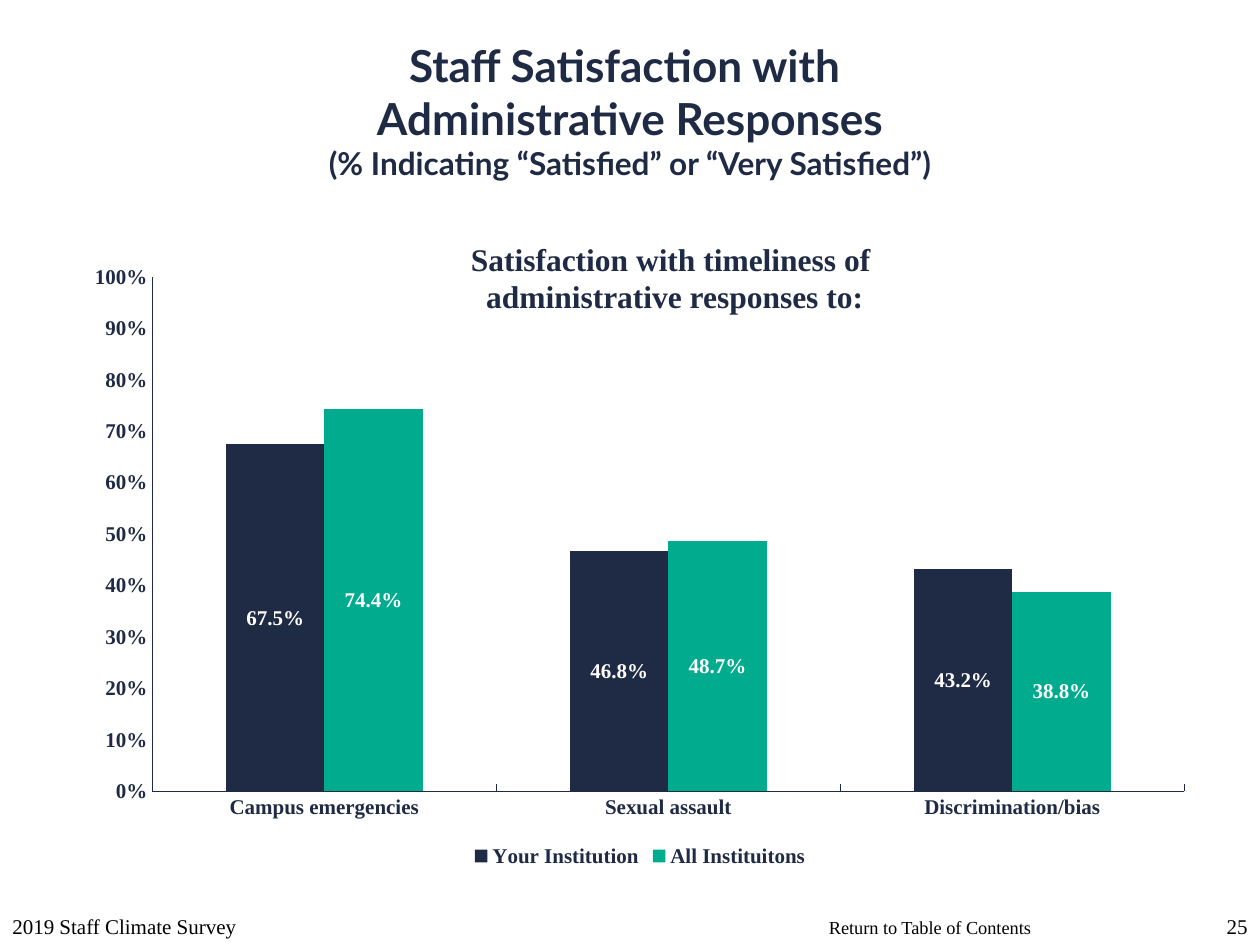
from copy import deepcopy
from lxml.etree import SubElement
from pptx import Presentation
from pptx.chart.data import CategoryChartData
from pptx.dml.color import RGBColor
from pptx.enum.chart import XL_CHART_TYPE, XL_LABEL_POSITION, XL_LEGEND_POSITION, XL_TICK_MARK
from pptx.enum.text import MSO_ANCHOR, MSO_AUTO_SIZE, PP_ALIGN
from pptx.oxml.ns import qn
from pptx.util import Inches, Pt

WIDE, HIGH = Inches(10), Inches(7.5)
HEX = {"navy": "1F2A44", "green": "00AB8E", "white": "FFFFFF", "black": "000000"}
SERIF = "Times New Roman"
CATS = ["Campus emergencies", "Sexual assault", "Discrimination/bias"]
SERIES = [
    ("Your Institution", [0.675, 0.468, 0.432], "navy"),
    ("All Instituitons", [0.744, 0.487, 0.388], "green"),
]


def rgb(name):
    return RGBColor.from_string(HEX[name])


def place(x, y, w, h):
    """Turn shares of the slide's size into lengths."""
    return int(x * WIDE), int(y * HIGH), int(w * WIDE), int(h * HIGH)


def style(font, size, color="navy", bold=True, face=SERIF):
    font.name, font.size, font.bold = face, Pt(size), bold
    font.color.rgb = rgb(color)


def add_title(slide):
    title = slide.shapes.title
    title.left, title.top, title.width, title.height = place(0, 1 / 30, 1, 1 / 6)
    frame = title.text_frame
    frame.text = ("Staff Satisfaction with \vAdministrative Responses\v"
                  "(% Indicating “Satisfied” or “Very Satisfied”)")
    frame.auto_size = MSO_AUTO_SIZE.NONE
    frame.vertical_anchor = MSO_ANCHOR.MIDDLE
    para = frame.paragraphs[0]
    para.alignment = PP_ALIGN.CENTER
    for run, size in zip(para.runs, (25.2, 25.2, 18)):
        style(run.font, size, face="Lato")
    # Line breaks take the size of the text before them
    for gap, run in zip(para._p.findall(qn("a:br")), para.runs):
        gap.insert(0, deepcopy(run._r.rPr))


def add_text(slide, text, box, size, color="black", bold=False,
             align=PP_ALIGN.LEFT, anchor=MSO_ANCHOR.TOP, wrap=True):
    frame = slide.shapes.add_textbox(*place(*box)).text_frame
    frame.text = text
    frame.word_wrap, frame.vertical_anchor = wrap, anchor
    for para in frame.paragraphs:
        para.alignment = align
        for run in para.runs:
            style(run.font, size, color, bold)


def fix_plot(chart, **shares):
    """Pin the inner plot area to shares of the chart's size."""
    area = chart._chartSpace.chart.plotArea
    for old in area.findall(qn("c:layout")):
        area.remove(old)
    layout = SubElement(area, qn("c:layout"))
    area.insert(0, layout)
    manual = SubElement(layout, qn("c:manualLayout"))
    rules = {"layoutTarget": "inner", "xMode": "edge", "yMode": "edge", **shares}
    for name, value in rules.items():
        SubElement(manual, qn("c:" + name)).set("val", str(value))


def style_axis(axis, tick):
    axis.has_major_gridlines = False
    axis.major_tick_mark, axis.minor_tick_mark = tick, XL_TICK_MARK.NONE
    axis.format.line.color.rgb = rgb("navy")
    axis.format.line.width = Pt(0.75)
    style(axis.tick_labels.font, 12)


def add_bars(slide):
    data = CategoryChartData(number_format="0.0%")
    data.categories = CATS
    for name, values, _ in SERIES:
        data.add_series(name, values)
    chart = slide.shapes.add_chart(
        XL_CHART_TYPE.COLUMN_CLUSTERED, *place(0.058, 0.267, 0.9, 0.656), data).chart
    chart.has_title = False
    style(chart.font, 10)
    fix_plot(chart, x=0.07, y=0.04, w=0.91, h=0.83)
    style_axis(chart.category_axis, XL_TICK_MARK.INSIDE)
    scale = chart.value_axis
    style_axis(scale, XL_TICK_MARK.NONE)
    scale.minimum_scale, scale.maximum_scale, scale.major_unit = 0, 1, 0.1
    scale.tick_labels.number_format = "0%"
    scale.tick_labels.number_format_is_linked = False
    chart.has_legend = True
    chart.legend.position = XL_LEGEND_POSITION.BOTTOM
    chart.legend.include_in_layout = False
    style(chart.legend.font, 12)
    plot = chart.plots[0]
    plot.gap_width, plot.overlap, plot.vary_by_categories = 150, 0, False
    for bars, (_, _, color) in zip(plot.series, SERIES):
        bars.format.fill.solid()
        bars.format.fill.fore_color.rgb = rgb(color)
        labels = bars.data_labels
        labels.show_value = True
        labels.position = XL_LABEL_POSITION.CENTER
        labels.number_format, labels.number_format_is_linked = "0.0%", False
        style(labels.font, 12, "white")


def main():
    deck = Presentation()
    deck.slide_width, deck.slide_height = WIDE, HIGH
    slide = deck.slides.add_slide(deck.slide_layouts[5])
    add_text(slide, "Return to Table of Contents", (0.648, 0.963, 0.182, 0.037),
             10.5, wrap=False)
    add_title(slide)
    add_bars(slide)
    foot = 14 / 15
    add_text(slide, "2019 Staff Climate Survey", (0, foot, 0.317, 1 - foot), 12,
             anchor=MSO_ANCHOR.BOTTOM)
    add_text(slide, "25", (0.95, foot, 0.05, 1 - foot), 12,
             align=PP_ALIGN.RIGHT, anchor=MSO_ANCHOR.BOTTOM)
    add_text(slide, "Satisfaction with timeliness of \nadministrative responses to:",
             (0.273, 0.247, 0.525, 0.095), 18, "navy", True, PP_ALIGN.CENTER)
    deck.save("out.pptx")


if __name__ == "__main__":
    main()
